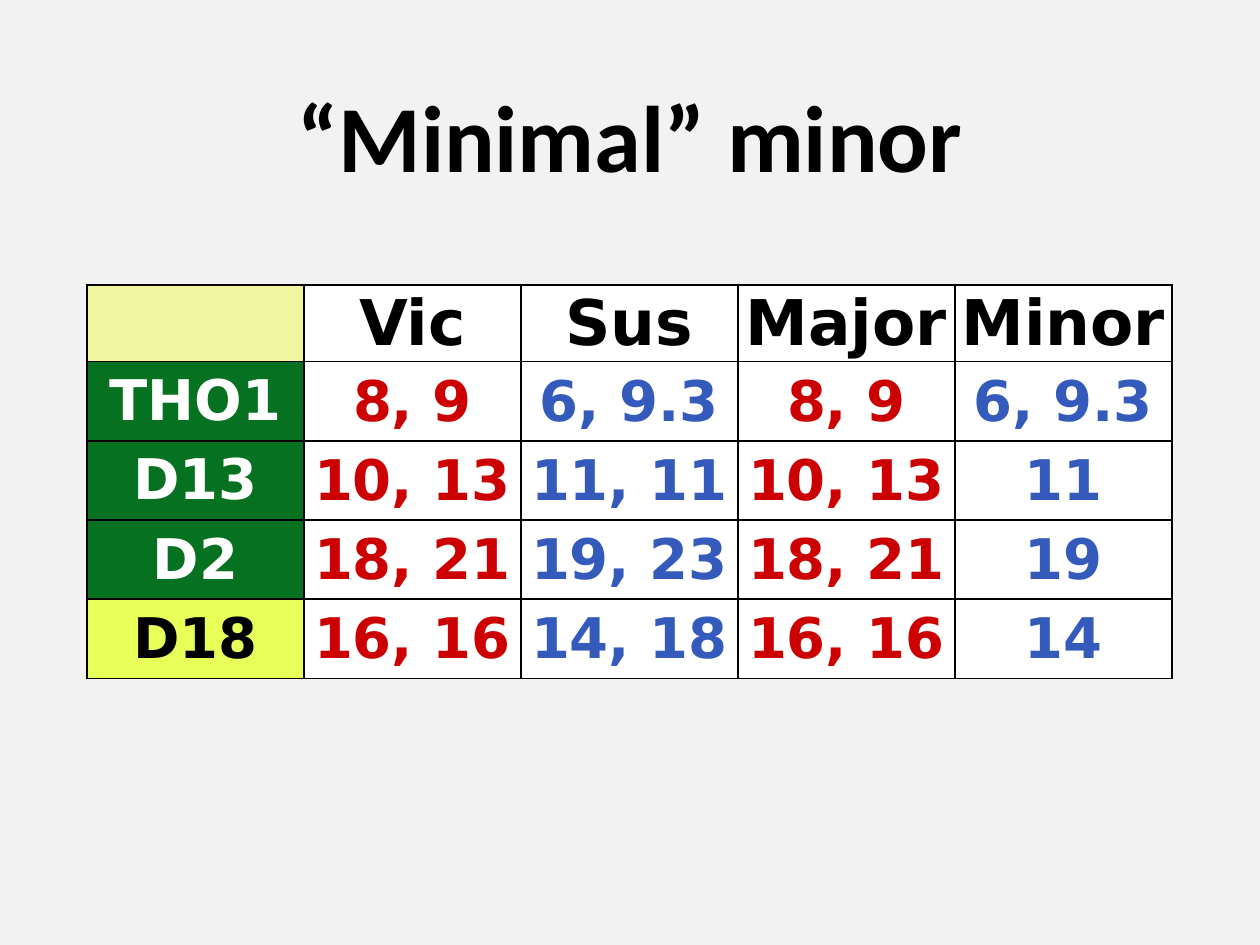
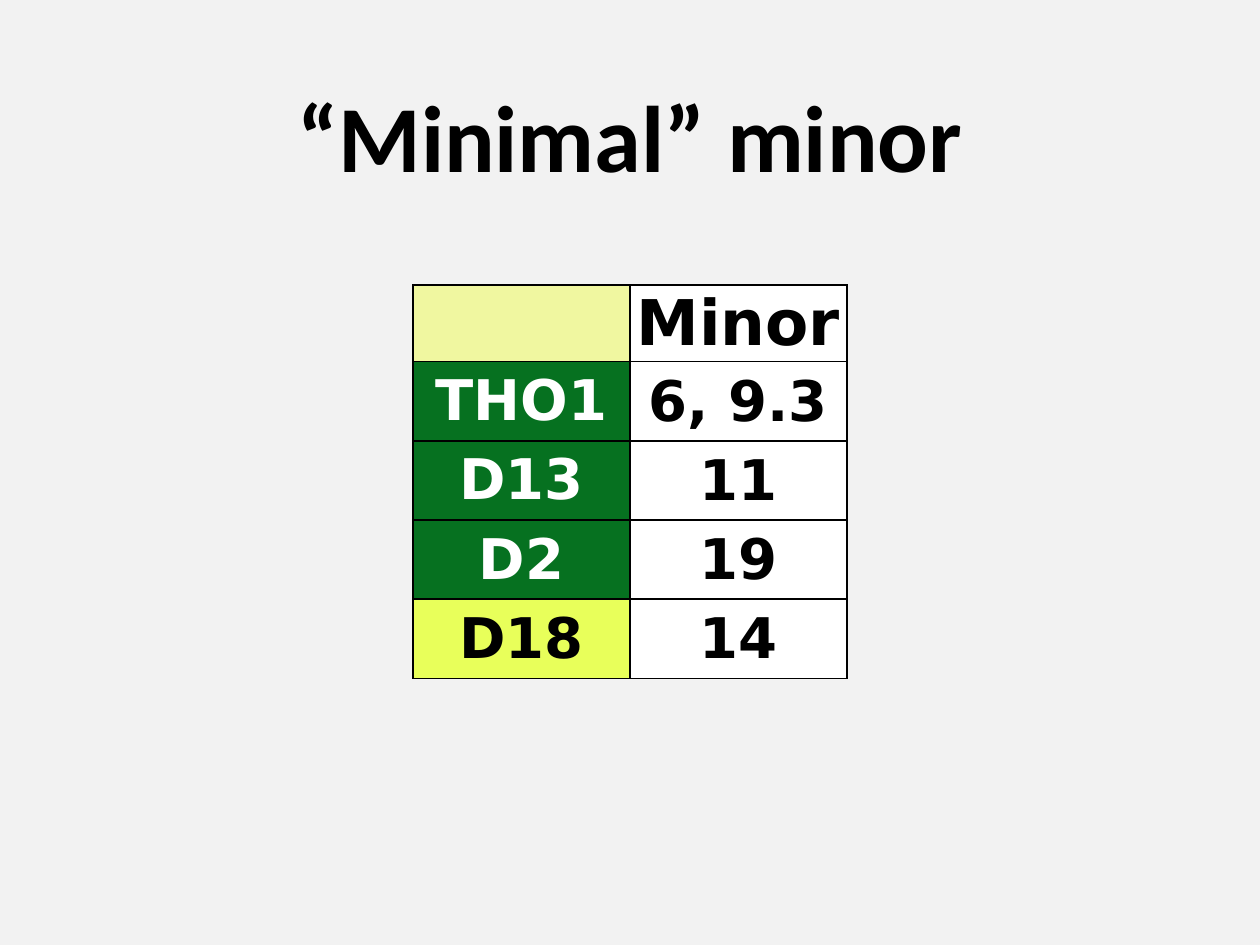
from lxml.etree import SubElement
from pptx import Presentation
from pptx.dml.color import RGBColor
from pptx.enum.text import MSO_ANCHOR as Anchor, PP_ALIGN as Align
from pptx.oxml.ns import qn
from pptx.util import Pt

COLORS = {
    "page": "F2F2F2",
    "black": "000000",
    "white": "FFFFFF",
    "corner": "F0F7A0",
    "green": "067120",
    "lime": "E8FF5A",
    "victim": "CC0000",
    "suspect": "345ABC",
}
EMU_PER_PX = 914400 / 126
PAGE_W, PAGE_H = 1260, 945
TABLE_TOP, COLUMN_W, HEADER_H, LOCUS_H = 285, 217, 75, 78

LOCI = ["THO1", "D13", "D2", "D18"]
VICTIM = ["8, 9", "10, 13", "18, 21", "16, 16"]
SUSPECT = ["6, 9.3", "11, 11", "19, 23", "14, 18"]
MINOR = ["6, 9.3", "11", "19", "14"]


def px(length):
    return round(length * EMU_PER_PX)


def rgb(color):
    return RGBColor.from_string(COLORS[color])


def style_text(frame, font, size, color):
    frame.vertical_anchor = Anchor.MIDDLE
    line = frame.paragraphs[0]
    line.alignment = Align.CENTER
    for run in line.runs:
        run.font.name = font
        run.font.size = Pt(size)
        run.font.bold = True
        run.font.color.rgb = rgb(color)


def add_titled_slide(deck, title):
    slide = deck.slides.add_slide(deck.slide_layouts[6])
    backdrop = slide.background.fill
    backdrop.solid()
    backdrop.fore_color.rgb = rgb("page")
    heading = slide.shapes.add_textbox(px(87), px(50), px(1086), px(183)).text_frame
    heading.word_wrap = True
    heading.text = title
    heading.paragraphs[0].line_spacing = 0.9
    style_text(heading, "Calibri", 54, "black")
    return slide


def add_borders(cell):
    properties = cell._tc.get_or_add_tcPr()
    for side in ("a:lnL", "a:lnR", "a:lnT", "a:lnB"):
        edge = SubElement(properties, qn(side), w=str(Pt(1)))
        ink = SubElement(edge, qn("a:solidFill"))
        SubElement(ink, qn("a:srgbClr"), val=COLORS["black"])


def fill_cell(cell, text, size=32, color="black", fill="white", margins=(1, 0)):
    cell.margin_left = cell.margin_right = px(1)
    cell.margin_top, cell.margin_bottom = map(px, margins)
    add_borders(cell)
    cell.fill.solid()
    cell.fill.fore_color.rgb = rgb(fill)
    cell.vertical_anchor = Anchor.MIDDLE
    if text:
        cell.text_frame.text = text
        style_text(cell.text_frame, "DejaVu Sans", size, color)


def add_allele_table(slide, profiles):
    column_count, row_count = len(profiles) + 1, len(LOCI) + 1
    width = column_count * COLUMN_W
    height = HEADER_H + len(LOCI) * LOCUS_H
    table = slide.shapes.add_table(
        row_count, column_count,
        px((PAGE_W - width) // 2), px(TABLE_TOP), px(width), px(height),
    ).table
    table.first_row = table.horz_banding = False
    for column in table.columns:
        column.width = px(COLUMN_W)
    for index, row in enumerate(table.rows):
        row.height = px(LOCUS_H if index else HEADER_H)

    fill_cell(table.cell(0, 0), "", fill="corner")
    for row, locus in enumerate(LOCI, 1):
        color, fill = ("black", "lime") if locus == "D18" else ("white", "green")
        fill_cell(table.cell(row, 0), locus, color=color, fill=fill, margins=(6, 6))
    for column, (person, alleles, color) in enumerate(profiles, 1):
        fill_cell(table.cell(0, column), person, size=36)
        for row, allele in enumerate(alleles, 1):
            fill_cell(table.cell(row, column), allele, color=color)


def main():
    deck = Presentation()
    deck.slide_width, deck.slide_height = px(PAGE_W), px(PAGE_H)
    comparisons = [
        [
            ("Vic", VICTIM, "victim"),
            ("Sus", SUSPECT, "suspect"),
            ("Major", VICTIM, "victim"),
            ("Minor", MINOR, "suspect"),
        ],
        [("Minor", MINOR, "black")],
    ]
    for profiles in comparisons:
        add_allele_table(add_titled_slide(deck, "“Minimal” minor"), profiles)
    deck.save("out.pptx")


if __name__ == "__main__":
    main()
